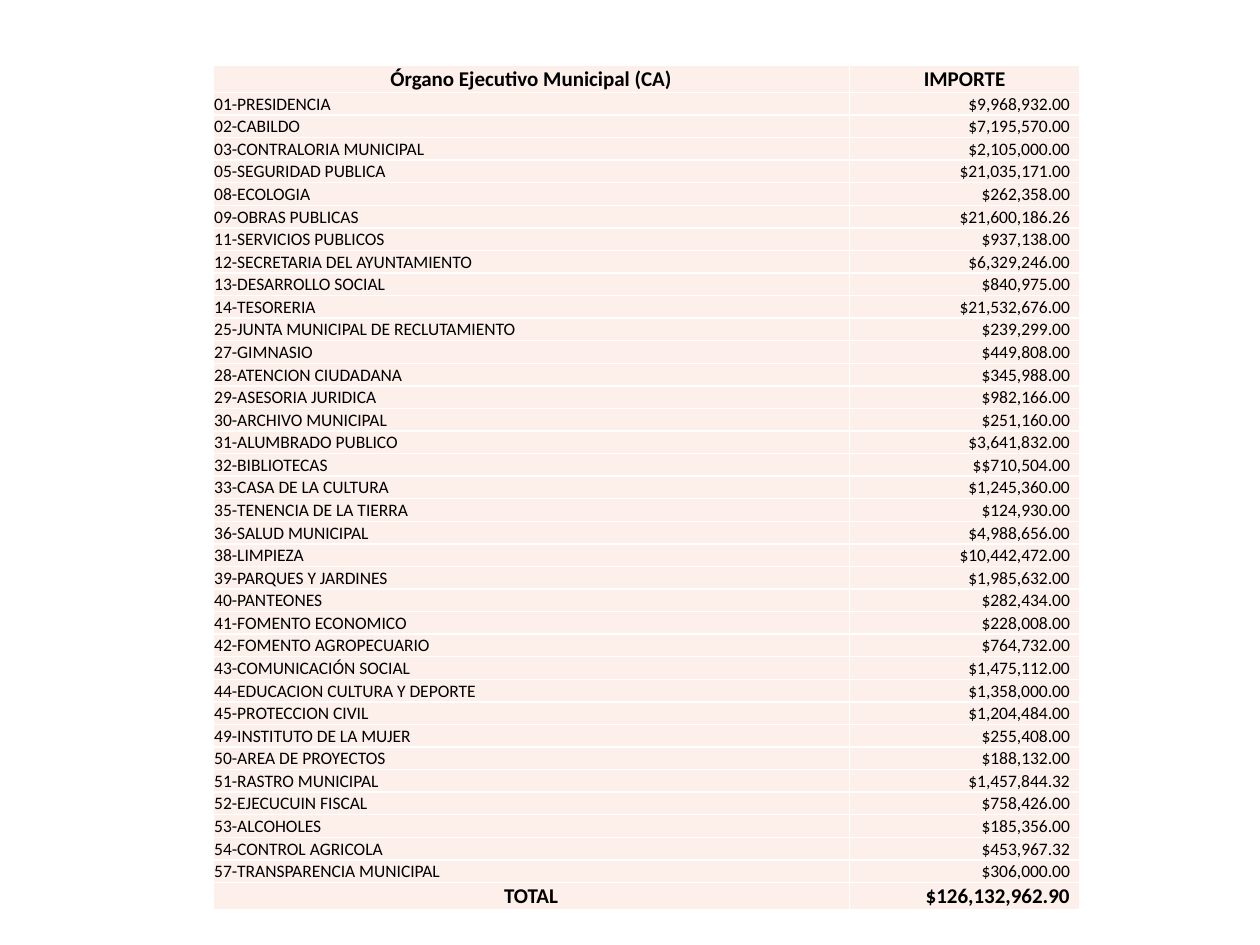
"""Build a slide with the municipal budget by department."""
from lxml.etree import SubElement
from pptx import Presentation
from pptx.dml.color import RGBColor
from pptx.enum.text import MSO_ANCHOR as Anchor, PP_ALIGN as Align
from pptx.oxml.ns import qn
from pptx.util import Inches, Pt

HEAD = ("Órgano Ejecutivo Municipal (CA)", "IMPORTE")
BODY = [
    ("01-PRESIDENCIA", "$9,968,932.00"),
    ("02-CABILDO", "$7,195,570.00"),
    ("03-CONTRALORIA MUNICIPAL", "$2,105,000.00"),
    ("05-SEGURIDAD PUBLICA", "$21,035,171.00"),
    ("08-ECOLOGIA", "$262,358.00"),
    ("09-OBRAS PUBLICAS", "$21,600,186.26"),
    ("11-SERVICIOS PUBLICOS", "$937,138.00"),
    ("12-SECRETARIA DEL AYUNTAMIENTO", "$6,329,246.00"),
    ("13-DESARROLLO SOCIAL", "$840,975.00"),
    ("14-TESORERIA", "$21,532,676.00"),
    ("25-JUNTA MUNICIPAL DE RECLUTAMIENTO", "$239,299.00"),
    ("27-GIMNASIO", "$449,808.00"),
    ("28-ATENCION CIUDADANA", "$345,988.00"),
    ("29-ASESORIA JURIDICA", "$982,166.00"),
    ("30-ARCHIVO MUNICIPAL", "$251,160.00"),
    ("31-ALUMBRADO PUBLICO", "$3,641,832.00"),
    ("32-BIBLIOTECAS", "$$710,504.00"),
    ("33-CASA DE LA CULTURA", "$1,245,360.00"),
    ("35-TENENCIA DE LA TIERRA", "$124,930.00"),
    ("36-SALUD MUNICIPAL", "$4,988,656.00"),
    ("38-LIMPIEZA", "$10,442,472.00"),
    ("39-PARQUES Y JARDINES", "$1,985,632.00"),
    ("40-PANTEONES", "$282,434.00"),
    ("41-FOMENTO ECONOMICO", "$228,008.00"),
    ("42-FOMENTO AGROPECUARIO", "$764,732.00"),
    ("43-COMUNICACIÓN SOCIAL", "$1,475,112.00"),
    ("44-EDUCACION CULTURA Y DEPORTE", "$1,358,000.00"),
    ("45-PROTECCION CIVIL", "$1,204,484.00"),
    ("49-INSTITUTO DE LA MUJER", "$255,408.00"),
    ("50-AREA DE PROYECTOS", "$188,132.00"),
    ("51-RASTRO MUNICIPAL", "$1,457,844.32"),
    ("52-EJECUCUIN FISCAL", "$758,426.00"),
    ("53-ALCOHOLES", "$185,356.00"),
    ("54-CONTROL AGRICOLA", "$453,967.32"),
    ("57-TRANSPARENCIA MUNICIPAL", "$306,000.00"),
]
TOTAL = ("TOTAL", "$126,132,962.90")

FONT = "Calibri"
BLACK = RGBColor(0x00, 0x00, 0x00)
WHITE = RGBColor(0xFF, 0xFF, 0xFF)
PEACH = RGBColor(0xFD, 0xEF, 0xE9)

LEFT, TOP, HIGH = 1.69, 0.52, 6.69
COLS = (5.05, 1.83)
EDGE = 0.21
STEP = (HIGH - 2 * EDGE) / len(BODY)


def add_edges(cell):
    props = cell._tc.get_or_add_tcPr()
    for place, side in enumerate(("lnL", "lnR", "lnT", "lnB")):
        line = props.makeelement(qn(f"a:{side}"), {"w": str(Pt(1))})
        props.insert(place, line)
        fill = SubElement(line, qn("a:solidFill"))
        SubElement(fill, qn("a:srgbClr"), val=str(WHITE))


def fill_cell(cell, text, align, bold, pad):
    cell.fill.solid()
    cell.fill.fore_color.rgb = PEACH
    cell.vertical_anchor = Anchor.MIDDLE
    cell.margin_left = cell.margin_top = Inches(0.01)
    cell.margin_right, cell.margin_bottom = Inches(pad), 0
    para = cell.text_frame.paragraphs[0]
    para.alignment = align
    run = para.add_run()
    run.text = text
    font = run.font
    font.name, font.size, font.bold = FONT, Pt(12 if bold else 10), bold
    font.color.rgb = BLACK
    add_edges(cell)


def main():
    deck = Presentation()
    deck.slide_width, deck.slide_height = Inches(10), Inches(7.5)
    slide = deck.slides.add_slide(deck.slide_layouts[6])
    rows = [HEAD, *BODY, TOTAL]
    frame = slide.shapes.add_table(
        len(rows), len(COLS), Inches(LEFT), Inches(TOP),
        Inches(sum(COLS)), Inches(HIGH))
    table = frame.table
    table.horz_banding = False
    for col, width in zip(table.columns, COLS):
        col.width = Inches(width)
    for r, row in enumerate(rows):
        bold = row in (HEAD, TOTAL)
        table.rows[r].height = Inches(EDGE if bold else STEP)
        for c, text in enumerate(row):
            money = c == 1 and row != HEAD
            align = Align.RIGHT if money else Align.CENTER if bold else Align.LEFT
            fill_cell(table.cell(r, c), text, align, bold, 0.08 if money else 0.01)
    deck.save("out.pptx")


if __name__ == "__main__":
    main()
